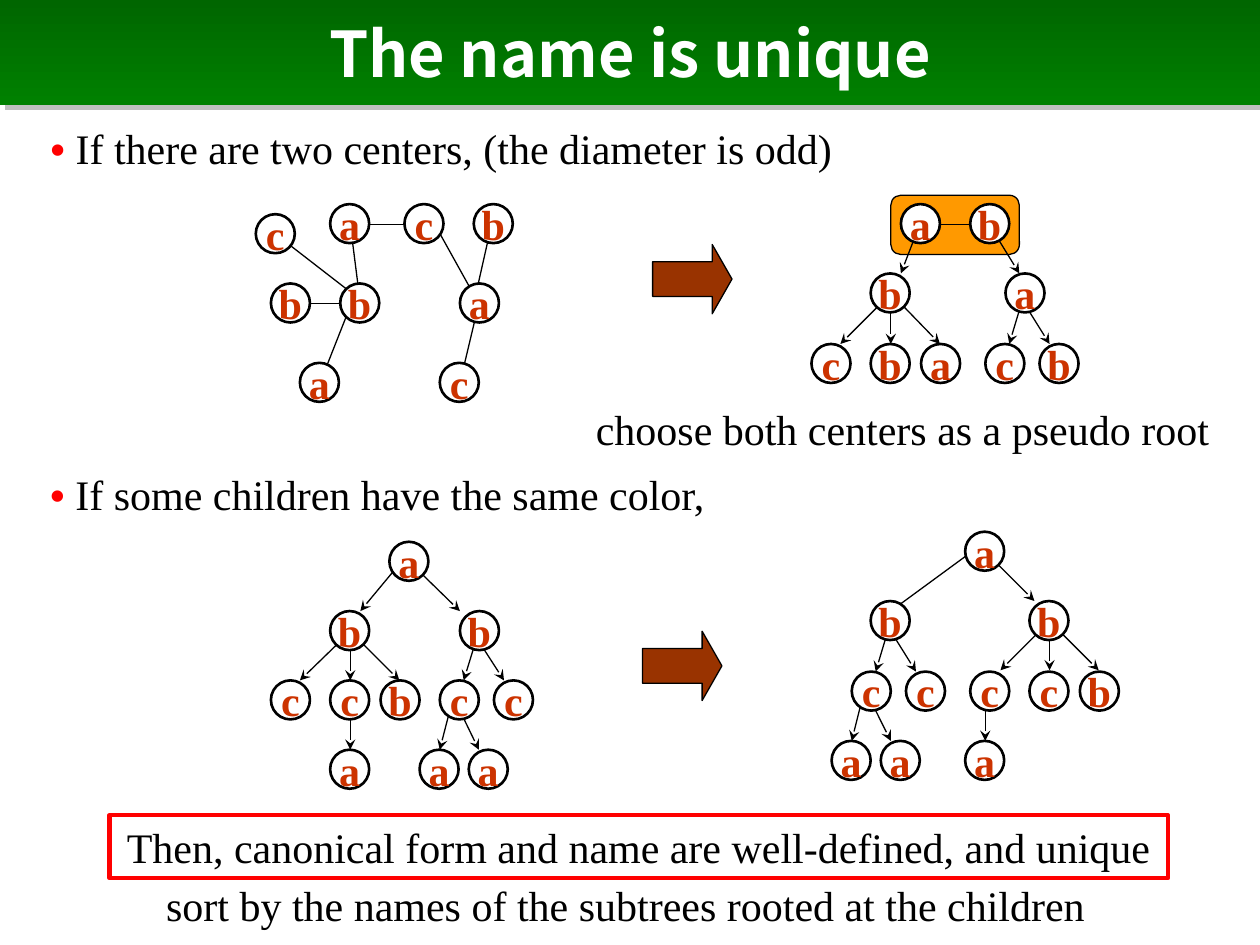
from lxml import etree
from pptx import Presentation
from pptx.dml.color import RGBColor
from pptx.enum.shapes import MSO_CONNECTOR, MSO_SHAPE
from pptx.enum.text import MSO_ANCHOR, PP_ALIGN
from pptx.oxml.ns import qn
from pptx.util import Inches, Pt

OVAL, RECT = MSO_SHAPE.OVAL, MSO_SHAPE.RECTANGLE
ROUNDED, RIGHT_ARROW = MSO_SHAPE.ROUNDED_RECTANGLE, MSO_SHAPE.RIGHT_ARROW
STRAIGHT = MSO_CONNECTOR.STRAIGHT
LEFT, CENTER = PP_ALIGN.LEFT, PP_ALIGN.CENTER
TOP, MIDDLE = MSO_ANCHOR.TOP, MSO_ANCHOR.MIDDLE

COLORS = {
    "black": "000000", "white": "FFFFFF", "red": "FF0000", "label": "CC3300",
    "arrow": "993300", "root": "FF9900", "shadow": "808080",
    "title_top": "006600", "title_bottom": "008000",
}
TITLE_FONT, BODY_FONT = "Noto Sans CJK JP", "Times New Roman"
BODY_SIZE, NODE = Pt(24), 0.31

# Content: positions are left, top, width, height in inches
TITLE = "The name is unique"
TITLE_BOX = (0, 0, 10, 0.83)
BULLETS = [
    ("If there are two centers, (the diameter is odd)", (0.3, 0.92, 6.61, 0.55)),
    ("If some children have the same color,", (0.3, 3.67, 6.61, 0.55)),
]
NOTES = [
    ("choose both centers as a pseudo root", (4.63, 3.2, 5.12, 0.55)),
    ("sort by the names of the subtrees rooted at the children", (1.22, 6.98, 7.56, 0.55)),
]
CONCLUSION = "Then, canonical form and name are well-defined, and unique"
CONCLUSION_BOX = (0.87, 6.47, 8.4, 0.5)
STEP_ARROWS = [(5.18, 1.94, 0.63, 0.55), (5.1, 5.01, 0.63, 0.55)]

# Trees: rows hold a top and the (label, left) of each node;
# edges run from (x, y) to (x, y)
TREES = [
    {"directed": False,
     "rows": [(1.62, [("a", 2.62), ("c", 3.21), ("b", 3.76)]),
              (1.7, [("c", 2.03)]),
              (2.25, [("b", 2.15), ("b", 2.7), ("a", 3.65)]),
              (2.88, [("a", 2.38), ("c", 3.49)])],
     "edges": [(2.82, 1.78, 3.37, 1.78), (2.19, 1.86, 2.9, 2.41),
               (2.54, 3.04, 2.82, 2.33), (3.92, 1.7, 3.76, 2.41),
               (2.28, 2.41, 2.82, 2.41), (2.78, 1.78, 2.86, 2.41),
               (3.45, 1.78, 3.8, 2.41), (3.8, 2.41, 3.65, 3.04)]},
    {"directed": True, "pseudo_root": (7.07, 1.55, 1.02, 0.47),
     "rows": [(1.62, [("a", 7.15), ("b", 7.7)]),
              (2.17, [("b", 6.91), ("a", 7.98)]),
              (2.73, [("c", 6.44), ("b", 6.91), ("a", 7.31), ("c", 7.82), ("b", 8.25)])],
     "edges": [(7.85, 1.78, 7.3, 1.78), (7.3, 1.78, 7.15, 2.17),
               (7.85, 1.78, 8.09, 2.17), (8.13, 2.33, 8.01, 2.73),
               (8.13, 2.41, 8.33, 2.73), (7.15, 2.41, 7.46, 2.73),
               (7.07, 2.41, 7.07, 2.73), (6.99, 2.41, 6.67, 2.73)]},
    {"directed": True,
     "rows": [(4.3, [("a", 3.09)]),
              (4.85, [("b", 2.62), ("b", 3.65)]),
              (5.4, [("c", 2.15), ("c", 2.62), ("b", 3.02), ("c", 3.49), ("c", 3.92)]),
              (5.95, [("a", 2.62), ("a", 3.33), ("a", 3.72)])],
     "edges": [(3.25, 4.38, 2.86, 4.85), (3.25, 4.46, 3.65, 4.85),
               (2.7, 5.09, 2.38, 5.4), (2.78, 5.09, 2.78, 5.4),
               (2.86, 5.09, 3.17, 5.4), (3.8, 5.01, 3.68, 5.4),
               (3.8, 5.09, 4, 5.4), (2.78, 5.64, 2.78, 5.95),
               (3.57, 5.64, 3.49, 5.95), (3.65, 5.64, 3.8, 5.95)]},
    {"directed": True,
     "rows": [(4.22, [("a", 7.66)]),
              (4.77, [("b", 6.91), ("b", 8.17)]),
              (5.33, [("c", 6.76), ("c", 7.19), ("c", 7.7), ("c", 8.17), ("b", 8.57)]),
              (5.88, [("a", 6.6), ("a", 6.99), ("a", 7.66)])],
     "edges": [(7.82, 4.3, 7.07, 4.85), (7.82, 4.38, 8.21, 4.77),
               (7.07, 4.93, 6.95, 5.33), (7.07, 5.01, 7.27, 5.33),
               (8.25, 5.01, 7.94, 5.32), (8.33, 5.01, 8.33, 5.32),
               (8.41, 5.01, 8.72, 5.32), (6.84, 5.56, 6.76, 5.88),
               (6.91, 5.56, 7.07, 5.88), (7.82, 5.56, 7.82, 5.88)]},
]


def rgb(name):
    return RGBColor.from_string(COLORS[name])


def inches(box):
    return [Inches(value) for value in box]


def place(shape, box):
    shape.left, shape.top, shape.width, shape.height = inches(box)


def style_font(font, color, bold=False, size=BODY_SIZE, face=BODY_FONT):
    font.name, font.size, font.bold = face, size, bold
    font.color.rgb = rgb(color)


def add_box(shapes, kind, box, fill=None, line="black", weight=0.75):
    shape = shapes.add_shape(kind, *inches(box))
    shape.shadow.inherit = False
    if fill:
        shape.fill.solid()
        shape.fill.fore_color.rgb = rgb(fill)
    else:
        shape.fill.background()
    shape.line.color.rgb = rgb(line)
    shape.line.width = Pt(weight)
    return shape


def write_centered(shape, text, color, bold=False):
    frame = shape.text_frame
    frame.word_wrap, frame.vertical_anchor = False, MIDDLE
    paragraph = frame.paragraphs[0]
    paragraph.text, paragraph.alignment = text, CENTER
    style_font(paragraph.font, color, bold)


def write_bullet(shape, text):
    frame = shape.text_frame
    frame.word_wrap, frame.vertical_anchor = True, TOP
    paragraph = frame.paragraphs[0]
    paragraph.alignment, paragraph.space_before = LEFT, Pt(4.8)
    for part, color, bold in (("• ", "red", True), (text, "black", False)):
        run = paragraph.add_run()
        run.text = part
        style_font(run.font, color, bold)


def add_edge(shapes, ends, directed):
    edge = shapes.add_connector(STRAIGHT, *inches(ends))
    edge.line.color.rgb = rgb("black")
    edge.line.width = Pt(0.75)
    if directed:
        etree.SubElement(edge.line._get_or_add_ln(), qn("a:tailEnd"), type="stealth")
    etree.SubElement(edge._element.spPr, qn("a:effectLst"))


def add_tree(slide, tree):
    shapes = slide.shapes.add_group_shape().shapes
    if "pseudo_root" in tree:
        add_box(shapes, ROUNDED, tree["pseudo_root"], "root")
    for ends in tree["edges"]:
        add_edge(shapes, ends, tree["directed"])
    for top, nodes in tree["rows"]:
        for label, left in nodes:
            node = add_box(shapes, OVAL, (left, top, NODE, NODE), "white", weight=1.5)
            write_centered(node, label, "label", bold=True)


def format_title(title):
    place(title, TITLE_BOX)
    title.text_frame.vertical_anchor = MIDDLE
    paragraph = title.text_frame.paragraphs[0]
    paragraph.text, paragraph.alignment = TITLE, CENTER
    style_font(paragraph.font, "white", True, Pt(36), TITLE_FONT)
    title.fill.gradient()
    title.fill.gradient_angle = 270
    for stop, color in zip(title.fill.gradient_stops, ("title_top", "title_bottom")):
        stop.color.rgb = rgb(color)
    effects = etree.SubElement(title._element.spPr, qn("a:effectLst"))
    shadow = etree.SubElement(effects, qn("a:outerShdw"), dist=str(Pt(4.2)), dir="2700000")
    tint = etree.SubElement(shadow, qn("a:srgbClr"), val=COLORS["shadow"])
    etree.SubElement(tint, qn("a:alpha"), val="50000")


def main():
    prs = Presentation()
    prs.slide_width, prs.slide_height = Inches(10), Inches(7.5)
    slide = prs.slides.add_slide(prs.slide_layouts[0])

    # Title and the two cases
    format_title(slide.shapes.title)
    first_case = slide.placeholders[1]
    place(first_case, BULLETS[0][1])
    second_case = slide.shapes.add_textbox(*inches(BULLETS[1][1]))
    for case, (text, _) in zip((first_case, second_case), BULLETS):
        write_bullet(case, text)

    # Explanations
    for text, box in NOTES:
        frame = slide.shapes.add_textbox(*inches(box)).text_frame
        frame.word_wrap = True
        paragraph = frame.paragraphs[0]
        paragraph.text = text
        paragraph.line_spacing, paragraph.space_before = 0.9, Pt(4.8)
        style_font(paragraph.font, "black")

    # Trees before and after each step
    for box in STEP_ARROWS:
        arrow = add_box(slide.shapes, RIGHT_ARROW, box, "arrow")
        arrow.adjustments[1] = 0.285
    for tree in TREES:
        add_tree(slide, tree)

    # Conclusion
    conclusion = add_box(slide.shapes, RECT, CONCLUSION_BOX, line="red", weight=2.5)
    write_centered(conclusion, CONCLUSION, "black")

    prs.save("out.pptx")


if __name__ == "__main__":
    main()
